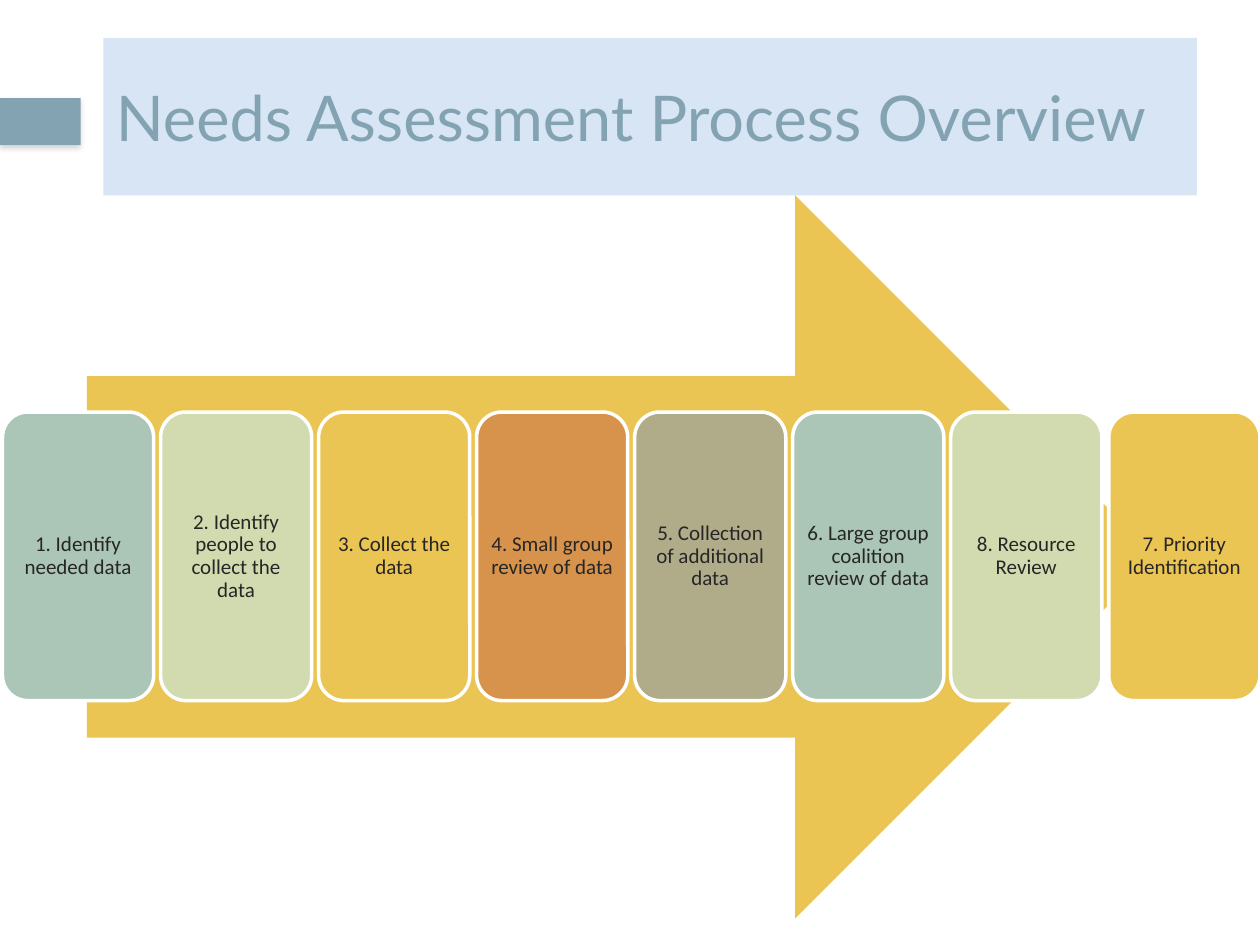
from dataclasses import dataclass

from lxml import etree
from pptx import Presentation
from pptx.dml.color import RGBColor
from pptx.enum import shapes, text
from pptx.util import Inches, Pt

COLOURS = {
    "slate": "83A3B2", "pale_blue": "D7E5F5", "gold": "EBC554",
    "sage": "ABC5B6", "lime": "D1DBAF", "orange": "D7934C",
    "khaki": "B0AC8A", "white": "FFFFFF", "ink": "262626",
}
SHADOW = """<a:effectLst xmlns:a="http://schemas.openxmlformats.org/drawingml/2006/main">
<a:outerShdw blurRad="39370" dist="22860" dir="5400000" rotWithShape="0">
<a:srgbClr val="808080"><a:alpha val="35000"/></a:srgbClr></a:outerShdw></a:effectLst>"""


@dataclass
class Step:
    label: str
    colour: str


STEPS = [
    Step("1. Identify needed data", "sage"),
    Step("2. Identify people to collect the data", "lime"),
    Step("3. Collect the data", "gold"),
    Step("4. Small group review of data", "orange"),
    Step("5. Collection of additional data", "khaki"),
    Step("6. Large group coalition review of data", "sage"),
    Step("8. Resource Review", "lime"),
    Step("7. Priority Identification", "gold"),
]
STEP_LEFT, STEP_TOP, STEP_WIDTH, STEP_HEIGHT = 0.02, 3.27, 1.2, 2.29
STEP_PITCH = (8.8 - STEP_LEFT) / (len(STEPS) - 1)


def rgb(name: str) -> RGBColor:
    return RGBColor.from_string(COLOURS[name])


def add_filled(page, kind, left: float, top: float, width: float, height: float, colour: str):
    """Add a flat preset shape without an outline."""
    shape = page.shapes.add_shape(kind, Inches(left), Inches(top), Inches(width), Inches(height))
    shape.shadow.inherit = False
    shape.fill.solid()
    shape.fill.fore_color.rgb = rgb(colour)
    shape.line.fill.background()
    return shape


def add_step(page, step: Step, index: int) -> None:
    """Add one rounded card of the process with its label."""
    card = add_filled(page, shapes.MSO_SHAPE.ROUNDED_RECTANGLE,
                      STEP_LEFT + index * STEP_PITCH, STEP_TOP,
                      STEP_WIDTH, STEP_HEIGHT, step.colour)
    card.line.color.rgb = rgb("white")
    card.line.width = Pt(2)
    frame = card.text_frame
    frame.word_wrap = True
    frame.vertical_anchor = text.MSO_ANCHOR.MIDDLE
    frame.margin_left = frame.margin_right = Inches(0.05)
    frame.margin_top = frame.margin_bottom = Inches(0.05)
    para = frame.paragraphs[0]
    para.text = step.label
    para.alignment = text.PP_ALIGN.CENTER
    para.line_spacing = 0.9
    para.font.name = "Calibri"
    para.font.size = Pt(12)
    para.font.color.rgb = rgb("ink")


def add_title(page, wording: str) -> None:
    title = page.shapes.title
    title.left, title.top = Inches(0.82), Inches(0.3)
    title.width, title.height = Inches(8.68), Inches(1.25)
    title.fill.solid()
    title.fill.fore_color.rgb = rgb("pale_blue")
    frame = title.text_frame
    frame.auto_size = text.MSO_AUTO_SIZE.NONE
    frame.word_wrap = True
    frame.vertical_anchor = text.MSO_ANCHOR.MIDDLE
    para = frame.paragraphs[0]
    para.text = wording
    para.alignment = text.PP_ALIGN.LEFT
    para.font.name = "Lato"
    para.font.size = Pt(36)
    para.font.color.rgb = rgb("slate")


def main() -> None:
    deck = Presentation()
    deck.slide_width, deck.slide_height = Inches(10), Inches(7.5)
    page = deck.slides.add_slide(deck.slide_layouts[5])

    # Title and the accent bar beside it
    add_title(page, "Needs Assessment Process Overview")
    bar = add_filled(page, shapes.MSO_SHAPE.RECTANGLE, 0, 0.78, 0.64, 0.37, "slate")
    properties = bar.element.spPr
    properties.replace(properties.effectLst, etree.fromstring(SHADOW))

    # Process arrow with the steps across it
    add_filled(page, shapes.MSO_SHAPE.RIGHT_ARROW, 0.69, 1.55, 8.49, 5.74, "gold")
    for index, step in enumerate(STEPS):
        add_step(page, step, index)

    deck.save("out.pptx")


if __name__ == "__main__":
    main()
